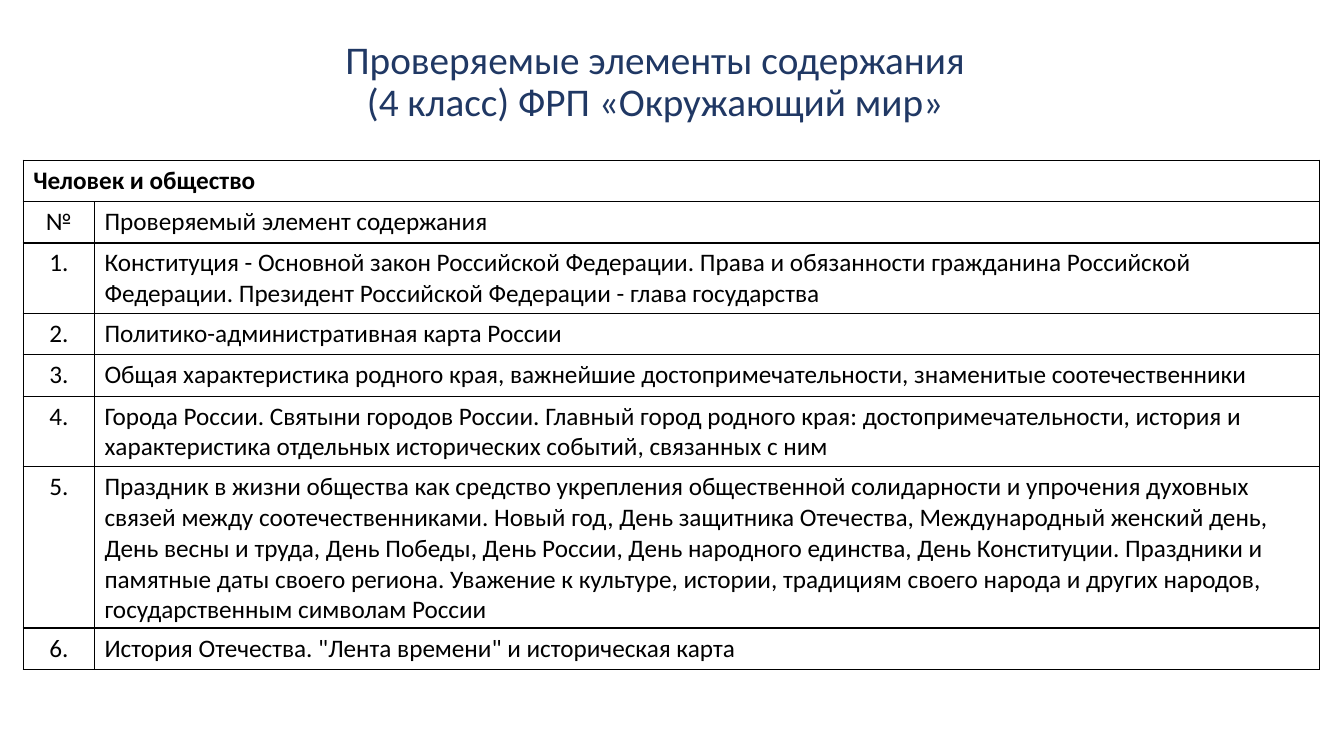
from dataclasses import dataclass

from lxml.etree import SubElement
from pptx import Presentation
from pptx.dml.color import RGBColor
from pptx.enum.text import MSO_ANCHOR, PP_ALIGN
from pptx.oxml.ns import qn
from pptx.util import Inches, Pt


@dataclass(frozen=True)
class Theme:
    """Colours, font and type sizes of the slide."""
    font: str = "Calibri"
    title_color: str = "203864"
    text_color: str = "000000"
    border_color: str = "000000"
    title_size: int = 28
    body_size: int = 18
    border_width: int = 1


THEME = Theme()
SLIDE_WIDTH, SLIDE_HEIGHT = 13.33, 7.5
TITLE_BOX = (0.79, 0.29, 11.5, 1.06)
TABLE_BOX = (0.23, 1.59, 12.86, 3.28)
NUMBER_SHARE = 0.055

TITLE = "Проверяемые элементы содержания \v(4 класс) ФРП «Окружающий мир» "
SECTION = "Человек и общество"
COLUMN_HEADS = ("№", "Проверяемый элемент содержания")
TOPICS = (
    "Конституция - Основной закон Российской Федерации. Права и обязанности "
    "гражданина Российской Федерации. Президент Российской Федерации - глава государства",
    "Политико-административная карта России",
    "Общая характеристика родного края, важнейшие достопримечательности, "
    "знаменитые соотечественники",
    "Города России. Святыни городов России. Главный город родного края: "
    "достопримечательности, история и характеристика отдельных исторических "
    "событий, связанных с ним",
    "Праздник в жизни общества как средство укрепления общественной солидарности "
    "и упрочения духовных связей между соотечественниками. Новый год, День "
    "защитника Отечества, Международный женский день, День весны и труда, День "
    "Победы, День России, День народного единства, День Конституции. Праздники и "
    "памятные даты своего региона. Уважение к культуре, истории, традициям своего "
    "народа и других народов, государственным символам России",
    "История Отечества. \"Лента времени\" и историческая карта",
)


def write_text(text_frame, text, *, size, color, bold=False,
               align=PP_ALIGN.LEFT, line_spacing=None):
    """Write one formatted paragraph into a text frame."""
    text_frame.word_wrap = True
    paragraph = text_frame.paragraphs[0]
    paragraph.text = text
    paragraph.alignment = align
    paragraph.line_spacing = line_spacing
    for run in paragraph.runs:
        run.font.name = THEME.font
        run.font.size = Pt(size)
        run.font.bold = bold
        run.font.color.rgb = RGBColor.from_string(color)


def outline_cell(cell):
    """Clear the fill of a cell and draw its four borders."""
    properties = cell._tc.get_or_add_tcPr()
    for side in ("a:lnL", "a:lnR", "a:lnT", "a:lnB"):
        line = SubElement(properties, qn(side), w=str(Pt(THEME.border_width)))
        fill = SubElement(line, qn("a:solidFill"))
        SubElement(fill, qn("a:srgbClr"), val=THEME.border_color)
    cell.fill.background()


def add_title(slide, box):
    """Place the centred two-line title in the box."""
    shape = slide.shapes.add_textbox(*map(Inches, box))
    shape.text_frame.vertical_anchor = MSO_ANCHOR.MIDDLE
    write_text(shape.text_frame, TITLE, size=THEME.title_size,
               color=THEME.title_color, align=PP_ALIGN.CENTER, line_spacing=0.9)


def add_topics_table(slide, box):
    """Place the numbered table of topics under a merged section row."""
    numbered = [(f"{number}.", topic) for number, topic in enumerate(TOPICS, 1)]
    rows = [(SECTION, ""), COLUMN_HEADS, *numbered]
    table = slide.shapes.add_table(len(rows), 2, *map(Inches, box)).table
    table.first_row = table.horz_banding = False
    for column, share in zip(table.columns, (NUMBER_SHARE, 1 - NUMBER_SHARE)):
        column.width = Inches(box[2] * share)
    table.cell(0, 0).merge(table.cell(0, 1))
    for row_index, texts in enumerate(rows):
        is_section = row_index == 0
        for column_index, text in enumerate(texts):
            cell = table.cell(row_index, column_index)
            outline_cell(cell)
            centred = column_index == 0 and not is_section
            write_text(cell.text_frame, text, size=THEME.body_size,
                       color=THEME.text_color, bold=is_section,
                       align=PP_ALIGN.CENTER if centred else PP_ALIGN.LEFT)


def main():
    """Build the slide and save the presentation."""
    presentation = Presentation()
    presentation.slide_width = Inches(SLIDE_WIDTH)
    presentation.slide_height = Inches(SLIDE_HEIGHT)
    slide = presentation.slides.add_slide(presentation.slide_layouts[6])
    add_title(slide, TITLE_BOX)
    add_topics_table(slide, TABLE_BOX)
    presentation.save("out.pptx")


if __name__ == "__main__":
    main()
